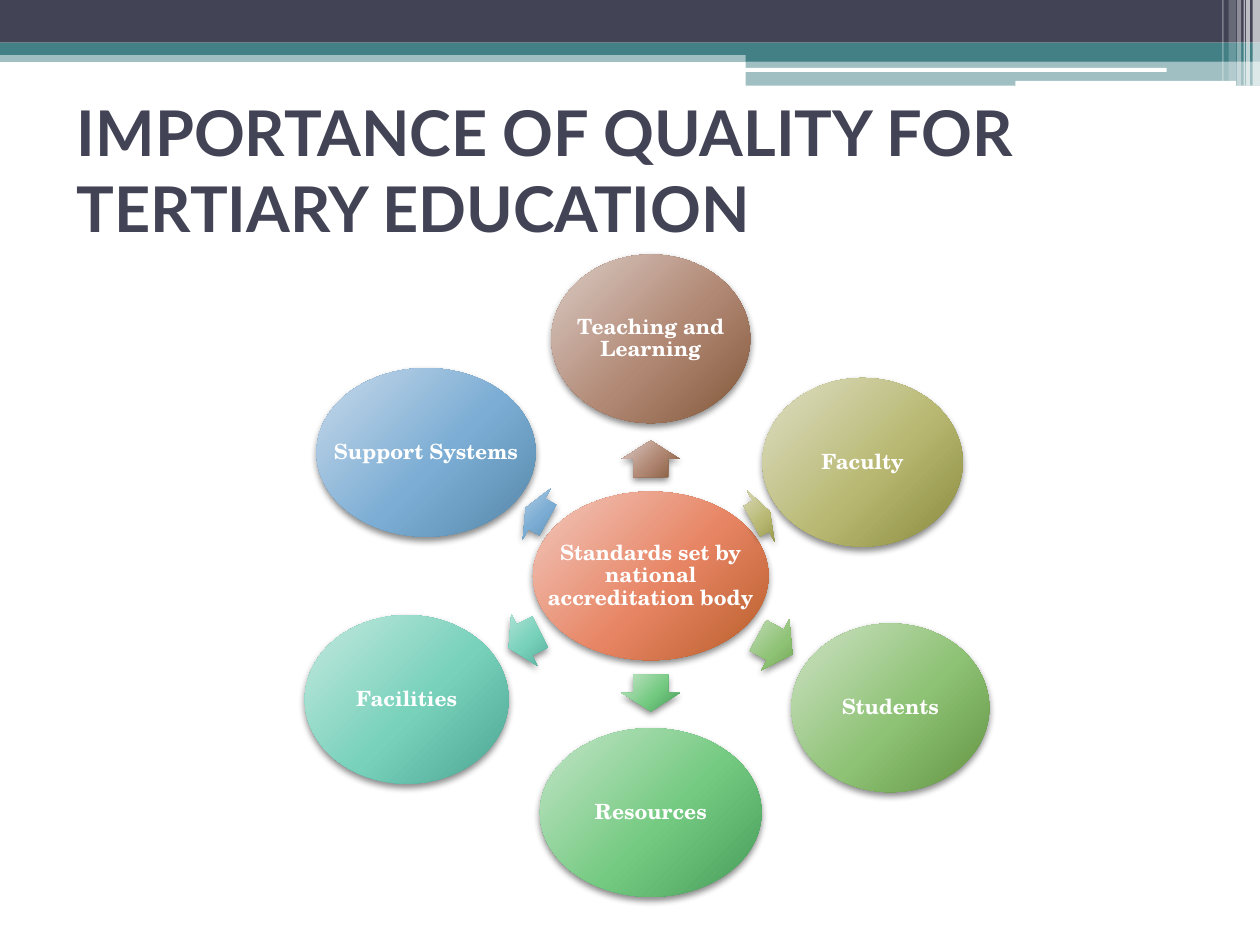
import math

import pptx
import pptx.dml.color
import pptx.enum.shapes
import pptx.enum.text
import pptx.oxml
import pptx.oxml.ns
import pptx.util

Cm = pptx.util.Cm
SHAPE = pptx.enum.shapes.MSO_SHAPE
NS = pptx.oxml.ns.nsdecls("a")

THEME = {
    "dark": "424456", "teal": "438086", "white": "FFFFFF",
    "title_font": "Lato", "title_size": 36,
    "label_font": "TeX Gyre Schola", "label_size": 12,
    # gradient stops at 0, 55 and 100 percent
    "orange": ("F2C9BF", "E78463", "B75E2A"),
    "brown": ("DBCCC6", "B18874", "825739"),
    "olive": ("DEDFC6", "B9B974", "8A8B3D"),
    "leaf": ("CEE2C5", "8EC275", "629442"),
    "green": ("C5E5C9", "75CA82", "469D58"),
    "mint": ("C5E9DF", "77D1BB", "4CA593"),
    "blue": ("C7D9EA", "7CADD4", "5688A9"),
}

deck = pptx.Presentation()
deck.slide_width, deck.slide_height = Cm(25.4), Cm(19.05)
slide = deck.slides.add_slide(deck.slide_layouts[6])


def add_glossy(preset, cx, cy, width, height, shades):
    """Borderless shape around a centre, with a radial gradient and a soft shadow."""
    glossy = slide.shapes.add_shape(
        preset, Cm(cx - width / 2), Cm(cy - height / 2), Cm(width), Cm(height))
    glossy.line.fill.background()
    glossy.shadow.inherit = False
    stops = "".join(
        f'<a:gs pos="{pos}"><a:srgbClr val="{shade}"/></a:gs>'
        for pos, shade in zip((0, 55000, 100000), shades))
    properties = glossy._element.spPr
    properties.find(pptx.oxml.ns.qn("a:ln")).addprevious(pptx.oxml.parse_xml(
        f'<a:gradFill {NS} rotWithShape="1"><a:gsLst>{stops}</a:gsLst><a:path path="circle">'
        '<a:fillToRect l="-40000" t="-90000" r="140000" b="190000"/></a:path></a:gradFill>'))
    properties.find(pptx.oxml.ns.qn("a:effectLst")).append(pptx.oxml.parse_xml(
        f'<a:outerShdw {NS} blurRad="50800" dist="25400" dir="5400000" rotWithShape="0">'
        '<a:srgbClr val="000000"><a:alpha val="45000"/></a:srgbClr></a:outerShdw>'))
    return glossy


def add_text(left, top, width, height, wording, role, colour):
    """Bold text box, centred vertically, in the font of its role."""
    box = slide.shapes.add_textbox(Cm(left), Cm(top), Cm(width), Cm(height))
    frame = box.text_frame
    frame.word_wrap = True
    frame.vertical_anchor = pptx.enum.text.MSO_ANCHOR.MIDDLE
    frame.text = wording
    font = frame.paragraphs[0].runs[0].font
    font.name = THEME[role + "_font"]
    font.size = pptx.util.Pt(THEME[role + "_size"])
    font.bold = True
    font.color.rgb = pptx.dml.color.RGBColor.from_string(THEME[colour])
    return frame


# Header bands: preset, left, top, width, height, colour, opacity in percent
bands = [
    (SHAPE.RECTANGLE, 0, 1.02, 25.4, 0.23, "teal", 50),
    (SHAPE.RECTANGLE, 0, 0, 25.4, 0.86, "dark", 100),
    (SHAPE.RECTANGLE, 0, 0.86, 25.4, 0.25, "teal", 100),
    (SHAPE.RECTANGLE, 15.03, 0.99, 10.37, 0.25, "teal", 100),
    (SHAPE.RECTANGLE, 15.03, 1.23, 10.37, 0.5, "teal", 50),
    (SHAPE.ROUNDED_RECTANGLE, 15.01, 1.37, 8.51, 0.08, "white", 100),
    (SHAPE.ROUNDED_RECTANGLE, 20.47, 1.63, 4.45, 0.1, "white", 100),
]
# Vertical stripes at the right end: left, width, height, opacity
stripes = [
    (25.25, 0.15, 1.73, 65), (25.12, 0.08, 1.73, 65), (25.07, 0.03, 1.73, 60),
    (24.94, 0.08, 1.73, 40), (24.77, 0.15, 1.63, 20), (24.64, 0.03, 1.63, 30),
]
bands += [(SHAPE.RECTANGLE, left, 0, width, height, "white", opacity)
          for left, width, height, opacity in stripes]
for preset, left, top, width, height, colour, opacity in bands:
    band = slide.shapes.add_shape(preset, Cm(left), Cm(top), Cm(width), Cm(height))
    band.shadow.inherit = False
    band.line.fill.background()
    band.fill.solid()
    band.fill.fore_color.rgb = pptx.dml.color.RGBColor.from_string(THEME[colour])
    if opacity < 100:
        tint = band._element.spPr.find(".//" + pptx.oxml.ns.qn("a:srgbClr"))
        tint.append(pptx.oxml.parse_xml(f'<a:alpha {NS} val="{opacity * 1000}"/>'))

# Title
add_text(1.3, 1.93, 22.86, 2.97, "IMPORTANCE OF QUALITY FOR TERTIARY EDUCATION",
         "title", "dark")

# Hub and its topics: wording, colour, centre x and y, width, arrow (x, y, length)
HUB_X, HUB_Y = 13.12, 11.61
BUBBLE_HEIGHT, ARROW_HEIGHT = 3.4, 1.17
bubbles = [
    ("Standards set by national accreditation body", "orange", HUB_X, HUB_Y, 4.75, None),
    ("Teaching and Learning", "brown", HUB_X, 6.83, 4.01, (HUB_X, 9.25, 0.74)),
    ("Faculty", "olive", 17.39, 9.32, 4.04, (15.34, 10.41, 0.41)),
    ("Students", "leaf", 17.95, 14.27, 3.99, (15.63, 13, 0.79)),
    ("Resources", "green", HUB_X, 16.38, 4.47, (HUB_X, 13.97, 0.74)),
    ("Facilities", "mint", 8.2, 14.1, 4.11, (10.57, 12.9, 0.71)),
    ("Support Systems", "blue", 8.59, 9.12, 4.42, (10.82, 10.36, 0.51)),
]
for wording, colour, x, y, width, arrow_place in bubbles:
    # Arrow pointing from the hub to the topic
    if arrow_place:
        arrow_x, arrow_y, length = arrow_place
        arrow = add_glossy(SHAPE.RIGHT_ARROW, arrow_x, arrow_y, length, ARROW_HEIGHT,
                           THEME[colour])
        arrow.adjustments[0], arrow.adjustments[1] = 0.6, 0.5
        arrow.rotation = math.degrees(math.atan2(y - HUB_Y, x - HUB_X)) % 360

    # Bubble and its label, which uses the full width of the bubble
    add_glossy(SHAPE.OVAL, x, y, width, BUBBLE_HEIGHT, THEME[colour])
    label = add_text(x - width / 2, y - BUBBLE_HEIGHT / 2, width, BUBBLE_HEIGHT,
                     wording, "label", "white")
    label.margin_left = label.margin_right = Cm(0.05)
    label.margin_top = label.margin_bottom = Cm(0.05)
    label.paragraphs[0].alignment = pptx.enum.text.PP_ALIGN.CENTER
    label.paragraphs[0].line_spacing = 0.9

deck.save("out.pptx")
